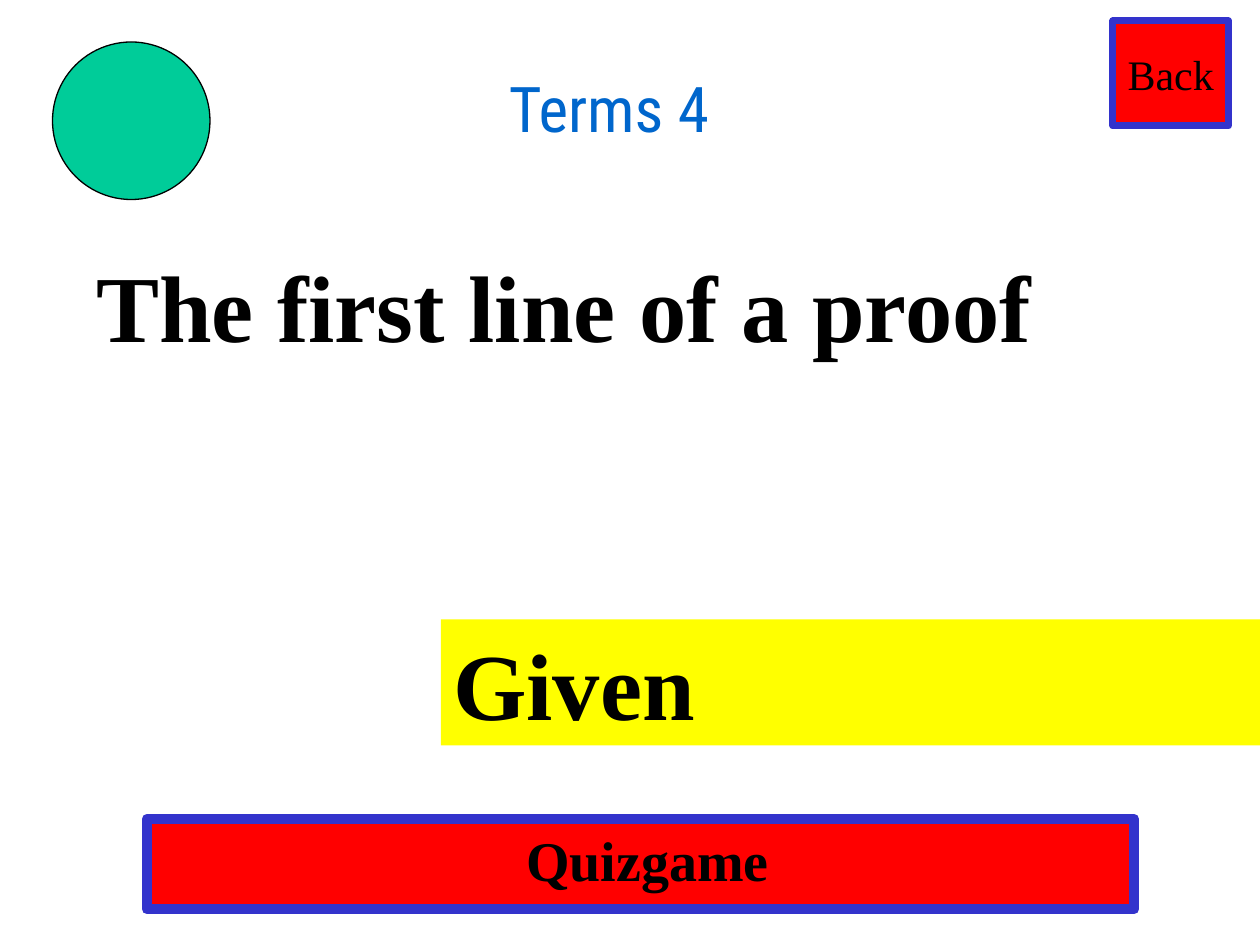
import pptx
import pptx.util
import pptx.dml.color
import pptx.enum.shapes
import pptx.enum.text

RGB = pptx.dml.color.RGBColor
KIND = pptx.enum.shapes.MSO_SHAPE
ALIGN = pptx.enum.text.PP_ALIGN
ANCHOR = pptx.enum.text.MSO_ANCHOR
Pt = pptx.util.Pt

RED = RGB(0xFF, 0x00, 0x00)
BLUE = RGB(0x33, 0x33, 0xCC)
SKY = RGB(0x00, 0x66, 0xCC)
GREEN = RGB(0x00, 0xCC, 0x99)
YELLOW = RGB(0xFF, 0xFF, 0x00)
BLACK = RGB(0x00, 0x00, 0x00)
SERIF = "Times New Roman"
SANS = "Roboto Condensed"

# The slide is a grid of 120 columns by 90 rows.
COLS, ROWS = 120, 90
WIDE, HIGH = pptx.util.Inches(10), pptx.util.Inches(7.5)


def place(box):
    x, y, w, h = box
    return (round(x * WIDE / COLS), round(y * HIGH / ROWS),
            round(w * WIDE / COLS), round(h * HIGH / ROWS))


def write(shape, text, size, font=SERIF, color=BLACK, bold=False,
          align=ALIGN.LEFT, anchor=ANCHOR.TOP, wrap=True):
    frame = shape.text_frame
    frame.text = text
    frame.word_wrap = wrap
    frame.vertical_anchor = anchor
    par = frame.paragraphs[0]
    par.alignment = align
    face = par.runs[0].font
    face.name, face.size, face.bold = font, Pt(size), bold
    face.color.rgb = color


def panel(slide, box, fill, line=None, width=0, kind=KIND.RECTANGLE):
    """Add a filled shape, outlined if a line colour is given."""
    shape = slide.shapes.add_shape(kind, *place(box))
    shape.shadow.inherit = False
    shape.fill.solid()
    shape.fill.fore_color.rgb = fill
    if line is None:
        shape.line.fill.background()
    else:
        shape.line.color.rgb = line
        shape.line.width = Pt(width)
    return shape


def label(slide, box, text, size, **style):
    write(slide.shapes.add_textbox(*place(box)), text, size, **style)


def button(slide, box, text, size, width, **style):
    shape = panel(slide, box, RED, BLUE, width)
    write(shape, text, size, align=ALIGN.CENTER, **style)


def answer(slide, box, text):
    write(panel(slide, box, YELLOW), text, 54, bold=True)


def main():
    deck = pptx.Presentation()
    deck.slide_width, deck.slide_height = WIDE, HIGH
    slide = deck.slides.add_slide(deck.slide_layouts[6])
    button(slide, (14, 78, 94, 8.6), " Quizgame", 32, 6, bold=True)
    label(slide, (28, 6, 60, 7.5), "Terms 4", 36, font=SANS, color=SKY,
          align=ALIGN.CENTER, wrap=False)
    button(slide, (106, 2, 11, 10), "Back", 24, 4,
           anchor=ANCHOR.MIDDLE, wrap=False)
    label(slide, (8, 23, 106.2, 12), "The first line of a proof", 54,
          bold=True)
    answer(slide, (42, 59, 78, 12), "Given")
    panel(slide, (5, 4, 15, 15), GREEN, BLACK, 0.75, KIND.OVAL)
    deck.save("out.pptx")


if __name__ == "__main__":
    main()
